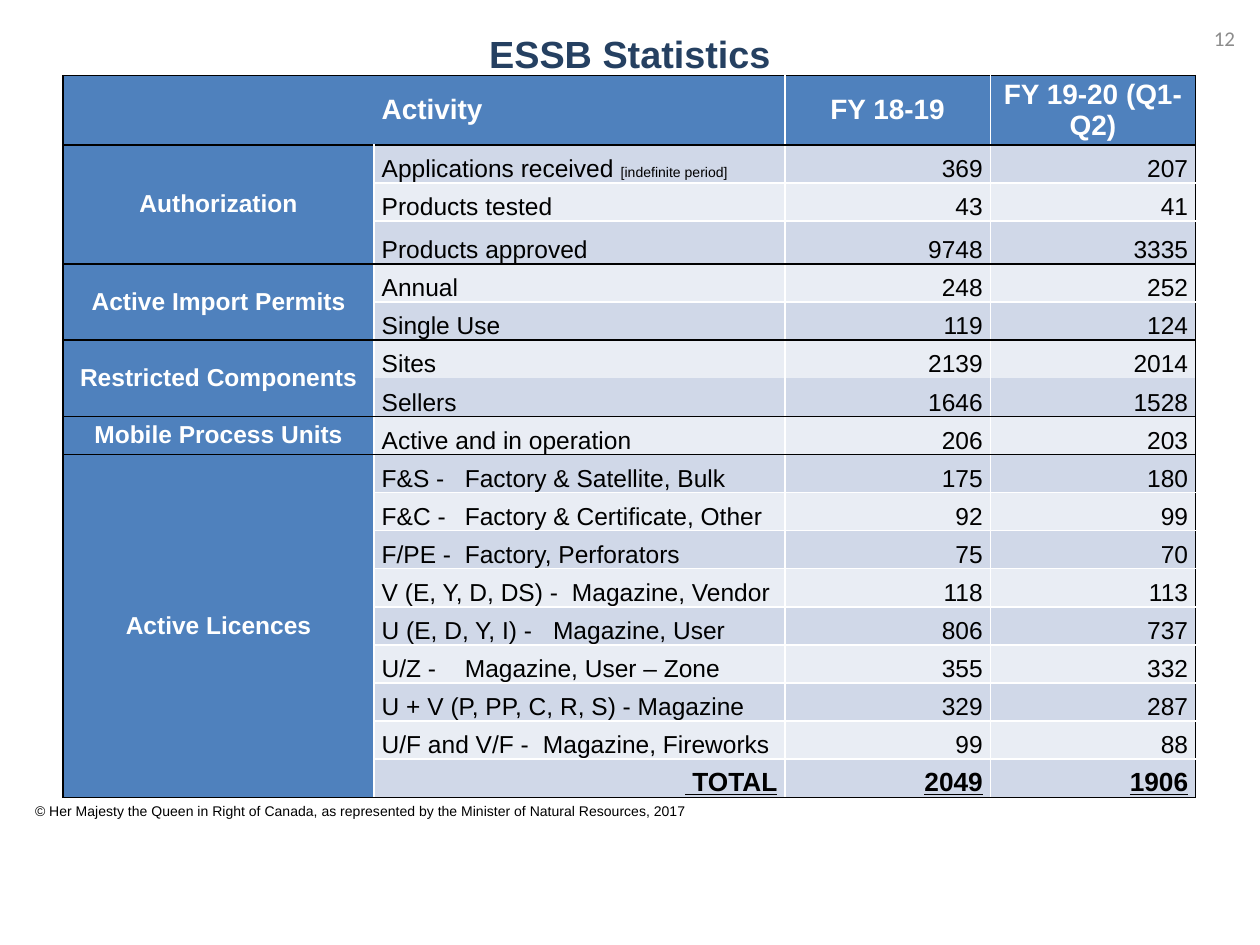
from dataclasses import dataclass

from lxml.etree import SubElement
from pptx import Presentation
from pptx.dml.color import RGBColor
from pptx.enum.text import MSO_ANCHOR, PP_ALIGN
from pptx.oxml.ns import qn
from pptx.util import Inches, Pt


@dataclass(frozen=True)
class Theme:
    font: str = "Arial"
    number_font: str = "Calibri"
    title: str = "254061"
    head: str = "4F81BD"
    bands: tuple = ("D0D8E8", "E9EDF4")
    black: str = "000000"
    white: str = "FFFFFF"
    gray: str = "8C8C8C"
    title_size: float = 21.6
    head_size: float = 16
    total_size: float = 15
    body_size: float = 14
    number_size: float = 12
    small_size: float = 8


theme = Theme()


def add_run(paragraph, text, size, color, bold=False, font=theme.font):
    run = paragraph.add_run()
    run.text = text
    run.font.size = Pt(size)
    run.font.name = font
    run.font.bold = bold
    run.font.color.rgb = RGBColor.from_string(color)
    return run


def style_cell(cell, fill, anchor, edges):
    properties = cell._tc.get_or_add_tcPr()
    for side, color in zip(("lnL", "lnR", "lnT", "lnB"), edges):
        line = SubElement(properties, qn(f"a:{side}"), w=str(Pt(1)))
        if color:
            solid = SubElement(line, qn("a:solidFill"))
            SubElement(solid, qn("a:srgbClr"), val=color)
        else:
            SubElement(line, qn("a:noFill"))
    cell.fill.solid()
    cell.fill.fore_color.rgb = RGBColor.from_string(fill)
    cell.vertical_anchor = anchor
    cell.margin_left = cell.margin_right = Inches(0.06)
    cell.margin_top = cell.margin_bottom = 0


headings = ["Activity", "", "FY 18-19", "FY 19-20 (Q1-Q2)"]
groups = [
    ("Authorization", theme.white, [
        ("Applications received ", 369, 207),
        ("Products tested", 43, 41),
        ("Products approved", 9748, 3335),
    ]),
    ("Active Import Permits", theme.white, [("Annual", 248, 252), ("Single Use", 119, 124)]),
    ("Restricted Components", None, [("Sites", 2139, 2014), ("Sellers", 1646, 1528)]),
    ("Mobile Process Units", theme.white, [("Active and in operation", 206, 203)]),
    ("Active Licences", theme.white, [
        ("F&S -\tFactory & Satellite, Bulk", 175, 180),
        ("F&C -\tFactory & Certificate, Other", 92, 99),
        ("F/PE -\tFactory, Perforators", 75, 70),
        ("V (E, Y, D, DS) -\tMagazine, Vendor", 118, 113),
        ("U (E, D, Y, I) -\tMagazine, User", 806, 737),
        ("U/Z -\tMagazine, User – Zone", 355, 332),
        ("U + V (P, PP, C, R, S) - Magazine", 329, 287),
        ("U/F and V/F -\tMagazine, Fireworks", 99, 88),
        (" TOTAL", 2049, 1906),
    ]),
]
tab_stops = {"V (E, Y, D, DS) -": 1.51, "U (E, D, Y, I) -": 1.36, "U/F and V/F -": 1.28}
default_tab = 0.66

presentation = Presentation()
presentation.slide_width = Inches(10)
presentation.slide_height = Inches(7.5)
slide = presentation.slides.add_slide(presentation.slide_layouts[6])

labels = [
    ((0.18, 6.32, 5.44, 0.37), PP_ALIGN.LEFT, MSO_ANCHOR.TOP,
     "© Her Majesty the Queen in Right of Canada, as represented by the Minister of Natural Resources, 2017",
     (theme.small_size, theme.black)),
    ((0.5, 0.23, 9, 0.38), PP_ALIGN.CENTER, MSO_ANCHOR.MIDDLE,
     "ESSB Statistics", (theme.title_size, theme.title, True)),
    ((9.39, 0.1, 0.51, 0.4), PP_ALIGN.RIGHT, MSO_ANCHOR.MIDDLE,
     "12", (theme.number_size, theme.gray, False, theme.number_font)),
]
for bounds, alignment, anchor, text, style in labels:
    frame = slide.shapes.add_textbox(*map(Inches, bounds)).text_frame
    frame.word_wrap = True
    frame.vertical_anchor = anchor
    frame.paragraphs[0].alignment = alignment
    add_run(frame.paragraphs[0], text, *style)

row_count = 1 + sum(len(rows) for _, _, rows in groups)
table_height, head_height, approved_height = 5.73, 0.55, 0.34
row_height = (table_height - head_height - approved_height) / (row_count - 2)
statistics = slide.shapes.add_table(
    row_count, 4, Inches(0.5), Inches(0.6), Inches(8.99), Inches(table_height)).table
statistics.first_row = statistics.horz_banding = False
for column, width in zip(statistics.columns, (2.47, 3.26, 1.63, 1.63)):
    column.width = Inches(width)
for row in statistics.rows:
    row.height = Inches(row_height)
statistics.rows[0].height = Inches(head_height)
statistics.rows[3].height = Inches(approved_height)

for column, heading in enumerate(headings):
    cell = statistics.cell(0, column)
    left = theme.white if column else theme.black
    right = theme.black if column == 3 else theme.white
    style_cell(cell, theme.head, MSO_ANCHOR.MIDDLE, (left, right, theme.black, theme.black))
    if heading:
        paragraph = cell.text_frame.paragraphs[0]
        paragraph.alignment = PP_ALIGN.CENTER
        add_run(paragraph, heading, theme.head_size, theme.white, True)
activity = statistics.cell(0, 0)
activity.text_frame.paragraphs[0]._p.get_or_add_pPr().set("marL", str(Inches(0.13)))
activity.merge(statistics.cell(0, 1))

row_index = 1
for group, divider, rows in groups:
    first, last = row_index, row_index + len(rows) - 1
    for activity, *counts in rows:
        style_cell(statistics.cell(row_index, 0), theme.head, MSO_ANCHOR.MIDDLE,
                   (theme.black, theme.white, theme.black, theme.black))
        top = theme.black if row_index == first else divider
        bottom = theme.black if row_index == last else divider
        is_total = row_index == row_count - 1
        size = theme.total_size if is_total else theme.body_size
        for column, value in enumerate((activity, *counts), 1):
            cell = statistics.cell(row_index, column)
            right = theme.black if column == 3 else theme.white
            style_cell(cell, theme.bands[(row_index - 1) % 2], MSO_ANCHOR.BOTTOM,
                       (theme.white, right, top, bottom))
            paragraph = cell.text_frame.paragraphs[0]
            paragraph.alignment = PP_ALIGN.RIGHT if column > 1 or is_total else PP_ALIGN.LEFT
            code, tab, _ = str(value).partition("\t")
            if tab:
                stops = SubElement(paragraph._p.get_or_add_pPr(), qn("a:tabLst"))
                position = Inches(tab_stops.get(code, default_tab))
                SubElement(stops, qn("a:tab"), pos=str(position), algn="l")
            run = add_run(paragraph, str(value), size, theme.black, is_total)
            run.font.underline = is_total
        row_index += 1
    group_cell = statistics.cell(first, 0)
    paragraph = group_cell.text_frame.paragraphs[0]
    paragraph.alignment = PP_ALIGN.CENTER
    add_run(paragraph, group, theme.body_size, theme.white, True)
    if last > first:
        group_cell.merge(statistics.cell(last, 0))

received = statistics.cell(1, 1).text_frame.paragraphs[0]
add_run(received, "[indefinite period]", theme.small_size, theme.black)

presentation.save("out.pptx")
